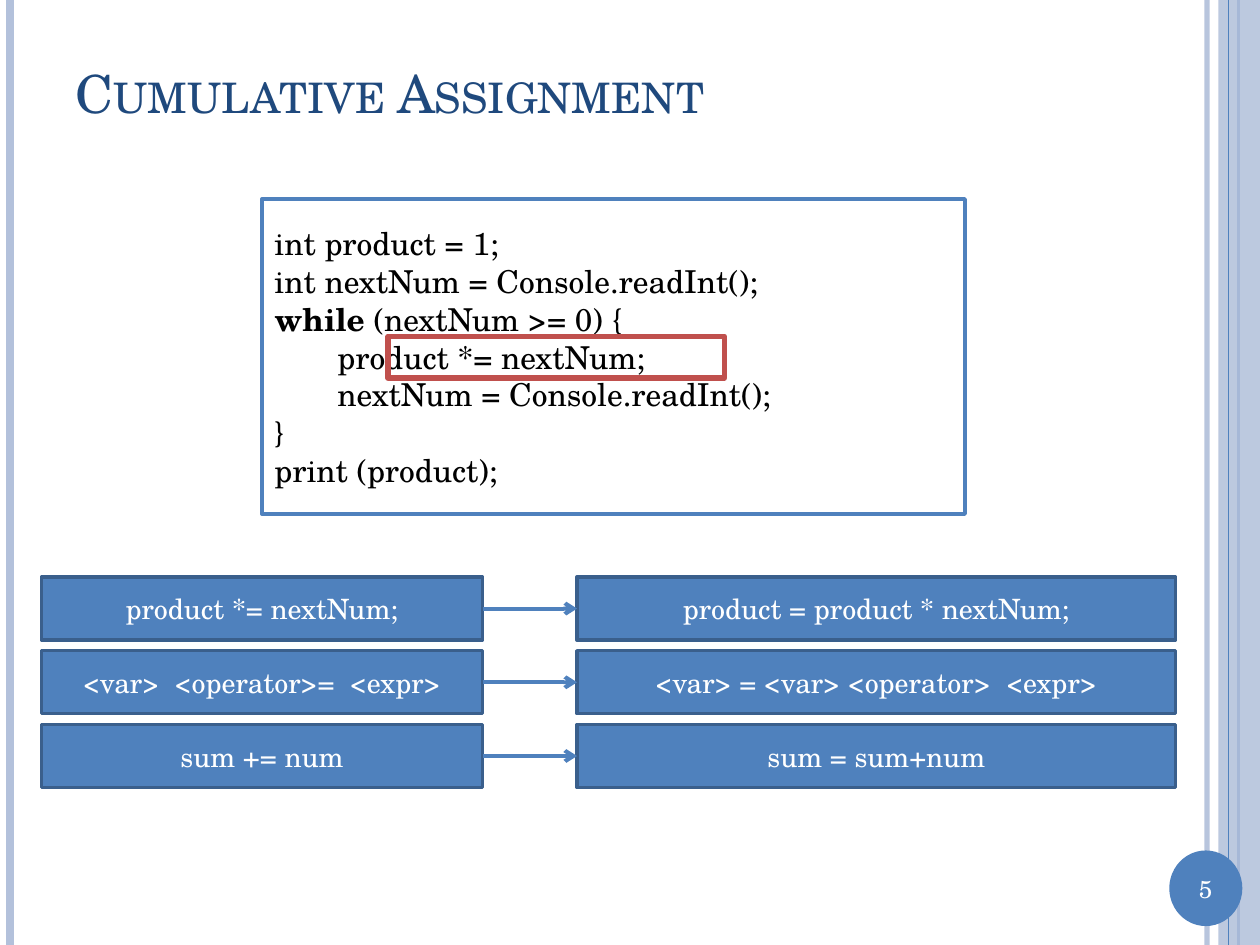
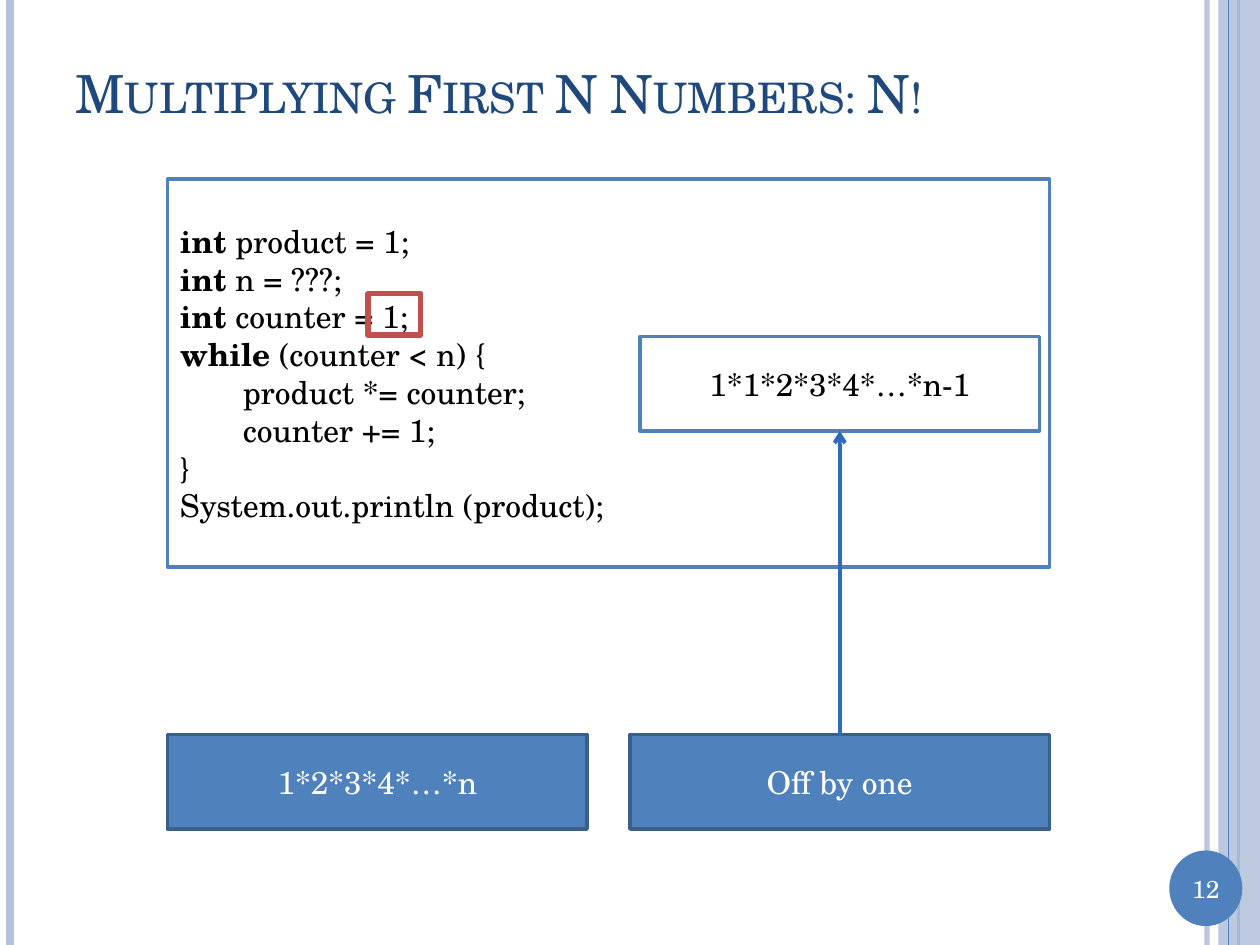
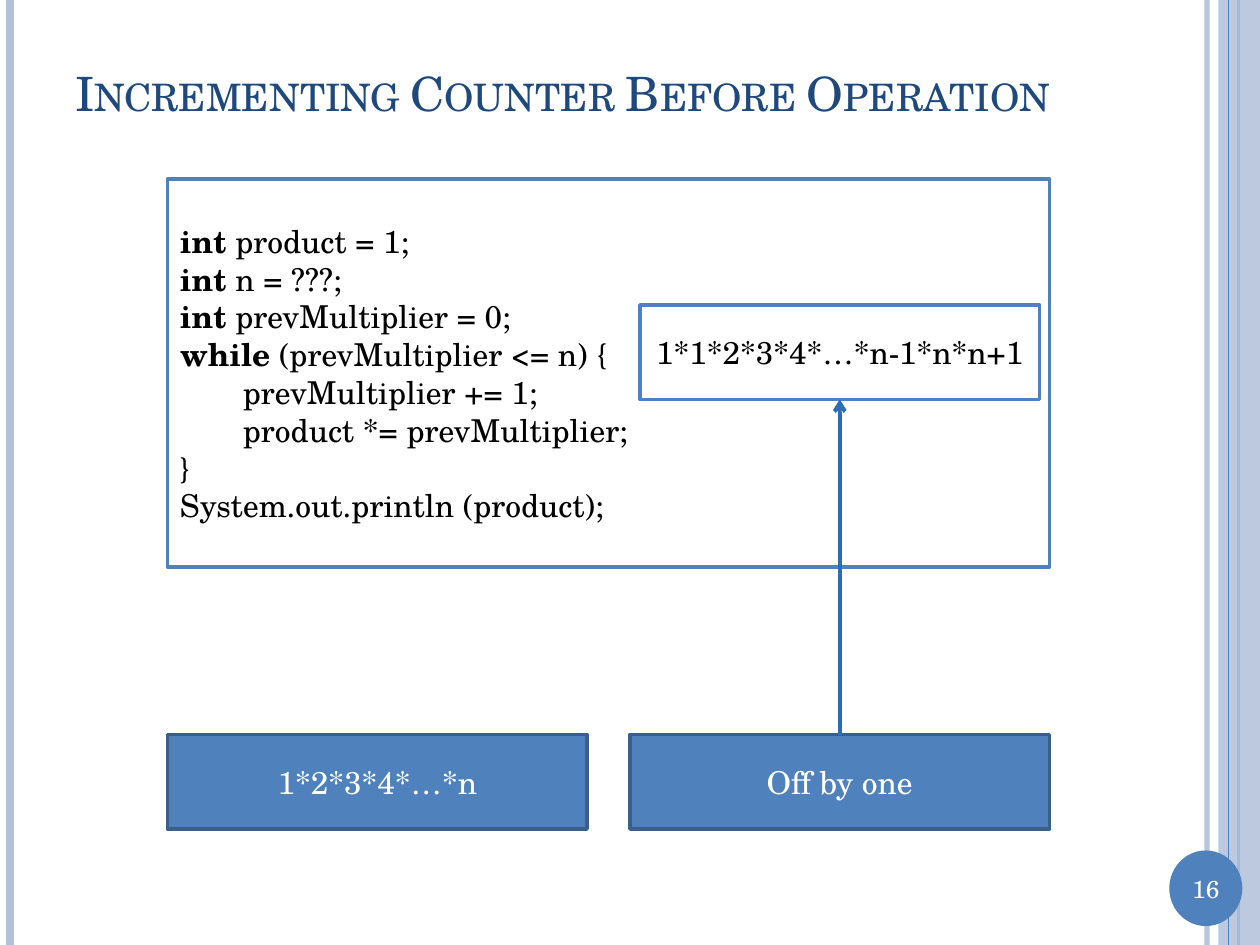
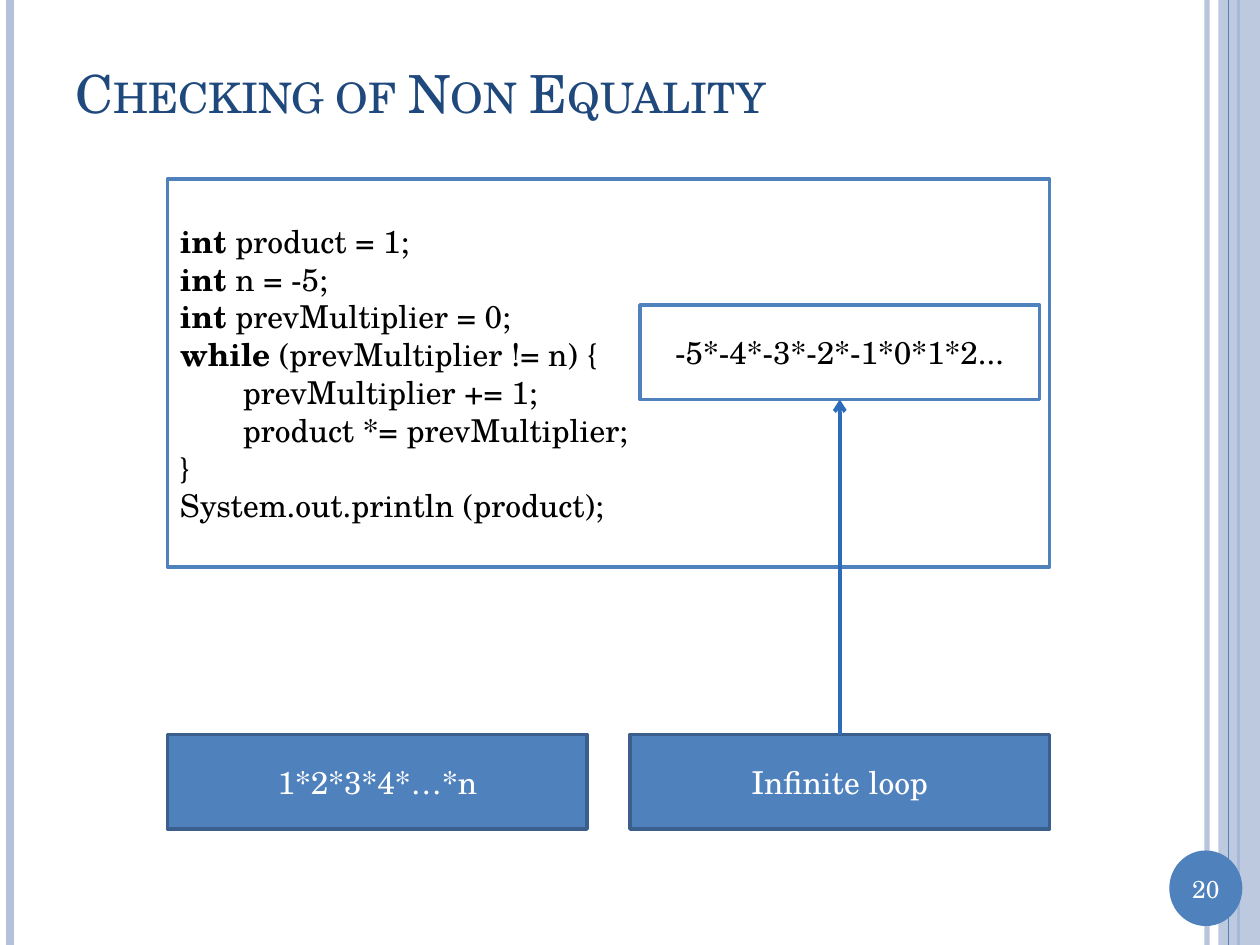
from lxml.etree import SubElement
from pptx import Presentation
from pptx.dml.color import RGBColor
from pptx.enum.shapes import MSO_CONNECTOR as Conn, MSO_SHAPE as Kind
from pptx.enum.text import MSO_ANCHOR as Anchor, PP_ALIGN as Align
from pptx.oxml.ns import qn
from pptx.util import Inches, Pt

WHITE = RGBColor(0xFF, 0xFF, 0xFF)
BLACK = RGBColor(0, 0, 0)
NAVY = RGBColor(0x1F, 0x49, 0x7D)
BLUE = RGBColor(0x4F, 0x81, 0xBD)
EDGE = RGBColor(0x3A, 0x5F, 0x8C)
ARROW = RGBColor(0x2C, 0x6C, 0xB9)
PALE = RGBColor(0xB3, 0xC1, 0xDB)
RED = RGBColor(0xC0, 0x50, 0x4D)
FONT = "TeX Gyre Schola"
WIDE, HIGH = 10, 7.5

# x, colour, width in points, opacity in percent
RULES = [(9.58, PALE, 3, 93), (0.08, PALE, 4.5, 100), (9.83, BLUE, 1.5, 100)]
PAIRS = [
    ("product *= nextNum;", "product = product * nextNum;"),
    ("<var>  <operator>=  <expr>", "<var> = <var> <operator>  <expr>"),
    ("sum += num", "sum = sum+num"),
]


def fade(fill, alpha):
    """Set the opacity, in percent, of a solid fill element's colour."""
    color = fill.find(qn("a:srgbClr"))
    SubElement(color, qn("a:alpha"), val=str(alpha * 1000))


def write(shape, text, size=18, color=BLACK, align=Align.LEFT, bold=(), small=False):
    """Fill a shape with lines; a first word listed in bold is set bold."""
    frame = shape.text_frame
    frame.word_wrap = True
    frame.vertical_anchor = Anchor.MIDDLE
    for i, line in enumerate(text.split("\n")):
        para = frame.paragraphs[0] if i == 0 else frame.add_paragraph()
        para.alignment = align
        word = line.split(" ")[0]
        parts = [(word, True), (line[len(word):], False)] if word in bold else [(line, False)]
        for part, heavy in parts:
            run = para.add_run()
            run.text = part
            font = run.font
            font.name, font.size, font.bold = FONT, Pt(size), heavy
            font.color.rgb = color
            if small:
                run._r.get_or_add_rPr().set("cap", "small")


def draw(slide, box, fill=None, edge=None, weight=2, kind=Kind.RECTANGLE):
    shape = slide.shapes.add_shape(kind, *map(Inches, box))
    shape.shadow.inherit = False
    if fill is None:
        shape.fill.background()
    else:
        shape.fill.solid()
        shape.fill.fore_color.rgb = fill
    if edge is None:
        shape.line.fill.background()
    else:
        shape.line.color.rgb = edge
        shape.line.width = Pt(weight)
    return shape


def label(slide, box, text, size=18, dark=True):
    """Draw a box with centred text: dark is blue, otherwise white."""
    fill, edge, color = (BLUE, EDGE, WHITE) if dark else (WHITE, BLUE, BLACK)
    shape = draw(slide, box, fill, edge)
    write(shape, text, size=size, color=color, align=Align.CENTER)
    return shape


def rule(slide, start, end, color, weight):
    line = slide.shapes.add_connector(Conn.STRAIGHT, *map(Inches, start + end))
    line.line.color.rgb = color
    line.line.width = Pt(weight)
    SubElement(line._element.spPr, qn("a:effectLst"))
    return line


def join(slide, first, side, last, stop, color):
    """Draw an arrow from one shape's side to another's."""
    line = rule(slide, (0, 0), (0, 0), color, 2.25)
    line.begin_connect(first, side)
    line.end_connect(last, stop)
    SubElement(line.line._get_or_add_ln(), qn("a:tailEnd"), type="arrow")


def mark(slide, box):
    draw(slide, box, edge=RED, weight=3)


def upright(slide, x, color, weight, alpha=100):
    line = rule(slide, (x, 0), (x, HIGH), color, weight)
    if alpha < 100:
        fade(line.line._get_or_add_ln().find(qn("a:solidFill")), alpha)


def start(deck, title, number, size=30):
    """Add a slide with its side bands, page number and title."""
    slide = deck.slides.add_slide(deck.slide_layouts[6])
    for item in RULES:
        upright(slide, *item)
    band = draw(slide, (9.67, 0, 0.33, HIGH), PALE)
    fade(band._element.spPr.find(qn("a:solidFill")), 87)
    upright(slide, 9.75, BLUE, 0.75)
    draw(slide, (9.28, 6.75, 0.58, 0.6), BLUE, kind=Kind.OVAL)
    page = slide.shapes.add_textbox(*map(Inches, (9.28, 6.88, 0.58, 0.34)))
    write(page, str(number), size=14, color=WHITE, align=Align.CENTER)
    head = slide.shapes.add_textbox(*map(Inches, (0.5, 0.3, 8.67, 0.87)))
    write(head, title, size=size, color=NAVY, small=True)
    return slide


def code(slide, box, text, bold):
    write(draw(slide, box, WHITE, BLUE), text, bold=bold)


def pairs(slide, box, rows):
    """Stack rows of short form, arrow and long form in the box."""
    left, top, width, height = box
    short, long, tall = 3.5, 4.75, 0.5
    step = (height - tall) / (len(rows) - 1)
    for i, (brief, full) in enumerate(rows):
        y = top + i * step
        a = label(slide, (left, y, short, tall), brief, size=16)
        b = label(slide, (left + width - long, y, long, tall), full, size=16)
        join(slide, a, 3, b, 1, BLUE)


def trial(slide, box, text, result, verdict, drop=1):
    """Show code, its result at a given drop, the goal and a verdict."""
    left, top, width, height = box
    gap, tall, inner = 0.34, 0.75, 3.17
    half = (width - gap) / 2
    right, base = left + half + gap, top + height - tall
    code(slide, (left, top, width, 3.08), text, bold=("int", "while"))
    label(slide, (left, base, half, tall), "1*2*3*4*…*n")
    end = label(slide, (right, base, half, tall), verdict)
    x = right + (half - inner) / 2
    out = label(slide, (x, top + drop, inner, tall), result, dark=False)
    join(slide, end, 0, out, 2, ARROW)


def product(n, test):
    return (f"int product = 1;\nint n = {n};\nint prevMultiplier = 0;\n"
            f"while (prevMultiplier {test} n) {{\n\tprevMultiplier += 1;\n"
            "\tproduct *= prevMultiplier;\n}\nSystem.out.println (product);")


def main():
    deck = Presentation()
    deck.slide_width, deck.slide_height = Inches(WIDE), Inches(HIGH)
    area = (1.33, 1.42, 7, 5.16)

    slide = start(deck, "Cumulative Assignment", 5)
    code(slide, (2.08, 1.58, 5.58, 2.5),
         "int product = 1;\nint nextNum = Console.readInt();\n"
         "while (nextNum >= 0) {\n\tproduct *= nextNum;\n"
         "\tnextNum = Console.readInt();\n}\nprint (product);", bold=("while",))
    mark(slide, (3.08, 2.67, 2.67, 0.33))
    pairs(slide, (0.33, 4.58, 9, 1.67), PAIRS)

    slide = start(deck, "Multiplying First N Numbers: N!", 12)
    trial(slide, area,
          "int product = 1;\nint n = ???;\nint counter = 1;\n"
          "while (counter < n) {\n\tproduct *= counter;\n\tcounter += 1;\n"
          "}\nSystem.out.println (product);",
          "1*1*2*3*4*…*n-1", "Off by one", drop=1.25)
    mark(slide, (2.92, 2.33, 0.42, 0.33))

    slide = start(deck, "Incrementing Counter Before Operation", 16, size=27)
    trial(slide, area, product("???", "<="), "1*1*2*3*4*…*n-1*n*n+1", "Off by one")

    slide = start(deck, "Checking of Non Equality", 20)
    trial(slide, area, product("-5", "!="), "-5*-4*-3*-2*-1*0*1*2...", "Infinite loop")

    deck.save("out.pptx")


if __name__ == "__main__":
    main()
